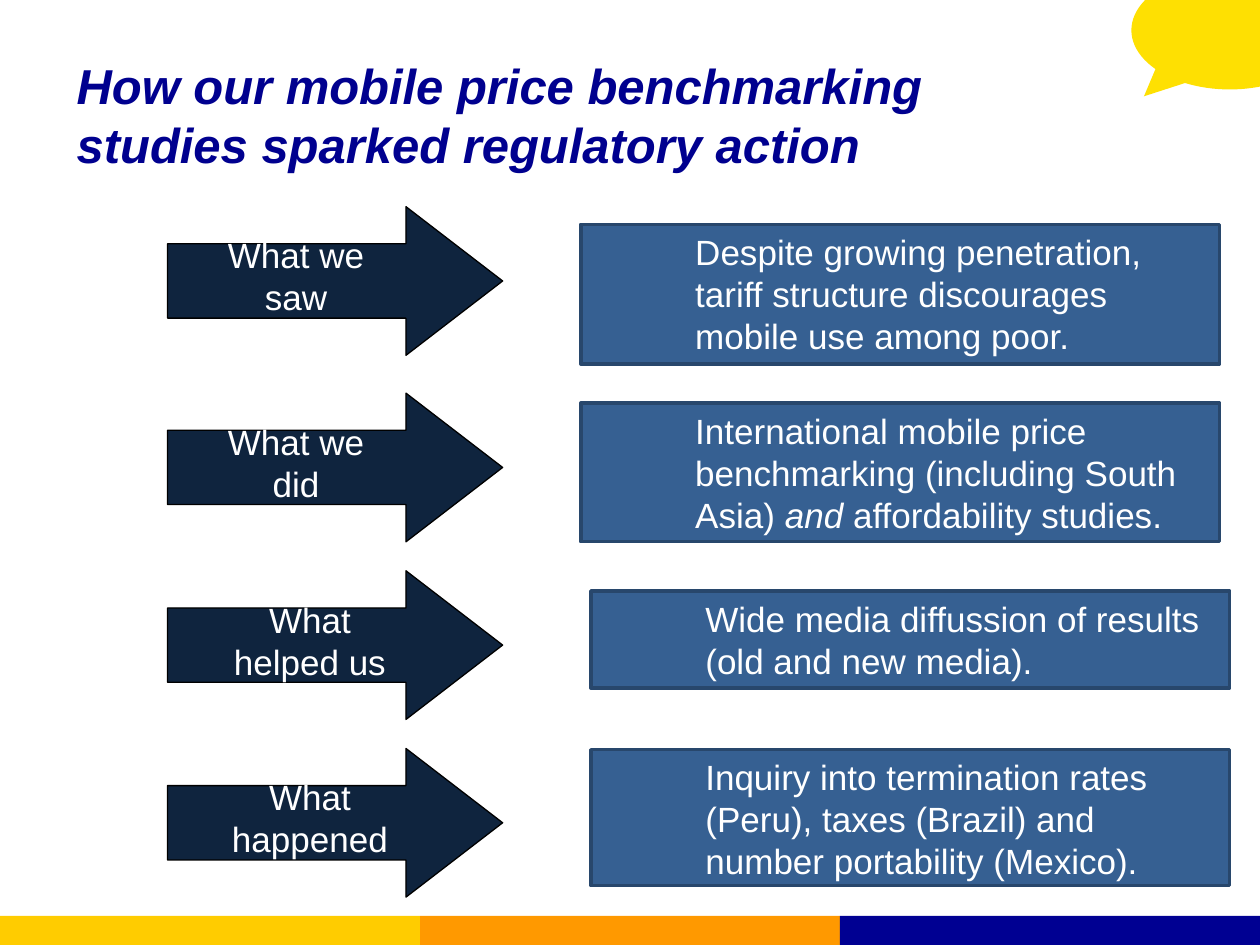
from pptx import Presentation
from pptx.dml.color import RGBColor
from pptx.enum.shapes import MSO_SHAPE as SHAPE
from pptx.enum.text import MSO_ANCHOR as ANCHOR, PP_ALIGN as ALIGN
from pptx.util import Inches, Pt

WIDTH, HEIGHT = 10, 7.5
WHITE = "FFFFFF"
BAND_COLORS = ["FFCC00", "FF9900", "000092"]
ARROW_LEFT, ARROW_W, ARROW_H = 1.33, 2.66, 1.18
LABEL_W, LABEL_H = 1.64, 0.31
BOX_W = 5.07

# label, label left, arrow top, (box left, top, height), runs as (text, italic)
ROWS = [
    ("What we saw", 1.53, 1.64, (4.61, 1.78, 1.11),
     [("Despite growing penetration, tariff structure discourages "
       "mobile use among poor.", False)]),
    ("What we did", 1.53, 3.12, (4.61, 3.2, 1.1),
     [("International mobile price benchmarking (including South Asia) ", False),
      ("and ", True), ("affordability studies.", False)]),
    ("What helped us", 1.64, 4.53, (4.69, 4.69, 0.77),
     [("Wide media diffussion of results (old and new media).", False)]),
    ("What happened", 1.64, 5.94, (4.69, 5.95, 1.08),
     [("Inquiry into termination rates (Peru), taxes (Brazil) and "
       "number portability (Mexico).", False)]),
]


def rgb(color):
    return RGBColor.from_string(color)


def add_shape(shapes, kind, box, fill, line=None, line_width=1, adjust=()):
    s = shapes.add_shape(kind, *map(Inches, box))
    s.shadow.inherit = False
    s.fill.solid()
    s.fill.fore_color.rgb = rgb(fill)
    if line:
        s.line.color.rgb = rgb(line)
        s.line.width = Pt(line_width)
    else:
        s.line.fill.background()
    for i, value in enumerate(adjust):
        s.adjustments[i] = value
    return s


def set_font(p, size, color):
    p.font.name = "Arial"
    p.font.size = Pt(size)
    p.font.color.rgb = rgb(color)


def add_text(shapes, box, text, size, color, wrap=True):
    tf = shapes.add_textbox(*map(Inches, box)).text_frame
    tf.word_wrap = wrap
    tf.vertical_anchor = ANCHOR.MIDDLE
    p = tf.paragraphs[0]
    p.text = text
    set_font(p, size, color)
    return p


def add_decor(shapes):
    add_shape(shapes, SHAPE.OVAL_CALLOUT, (8.98, -0.23, 1.56, 0.94), "FEE002",
              adjust=(-0.436, 0.558))
    band_w, band_h = WIDTH / len(BAND_COLORS), 0.23
    for i, color in enumerate(BAND_COLORS):
        add_shape(shapes, SHAPE.RECTANGLE,
                  (i * band_w, HEIGHT - band_h, band_w, band_h), color)


def add_title(shapes, box):
    p = add_text(shapes, box, "How our mobile price benchmarking studies "
                 "sparked regulatory action", 28, "00008F")
    p.font.bold = p.font.italic = True


def add_statement(shapes, box, runs):
    s = add_shape(shapes, SHAPE.RECTANGLE, box, "366092", "28476C", 2)
    tf = s.text_frame
    tf.word_wrap = True
    tf.vertical_anchor = ANCHOR.TOP
    p = tf.paragraphs[0]
    p.alignment = ALIGN.LEFT
    p._p.get_or_add_pPr().set("marL", str(Inches(0.81)))
    set_font(p, 20, WHITE)
    for text, italic in runs:
        r = p.add_run()
        r.text = text
        if italic:
            r.font.italic = True


def add_row(slide, label, label_left, top, box, runs):
    shapes = slide.shapes.add_group_shape().shapes
    left, box_top, box_h = box
    add_statement(shapes, (left, box_top, BOX_W, box_h), runs)
    add_shape(shapes, SHAPE.RIGHT_ARROW, (ARROW_LEFT, top, ARROW_W, ARROW_H),
              "0F243E", "000000", 0.75, (0.5, 0.65))
    label_top = top + (ARROW_H - LABEL_H) / 2 - 0.04
    p = add_text(shapes, (label_left, label_top, LABEL_W, LABEL_H),
                 label, 20, WHITE, wrap=False)
    p.alignment = ALIGN.CENTER


def main():
    prs = Presentation()
    prs.slide_width, prs.slide_height = Inches(WIDTH), Inches(HEIGHT)
    slide = prs.slides.add_slide(prs.slide_layouts[6])
    add_decor(slide.shapes)
    add_title(slide.shapes, (0.51, 0.28, 8.09, 1.25))
    for row in ROWS:
        add_row(slide, *row)
    prs.save("out.pptx")


if __name__ == "__main__":
    main()
